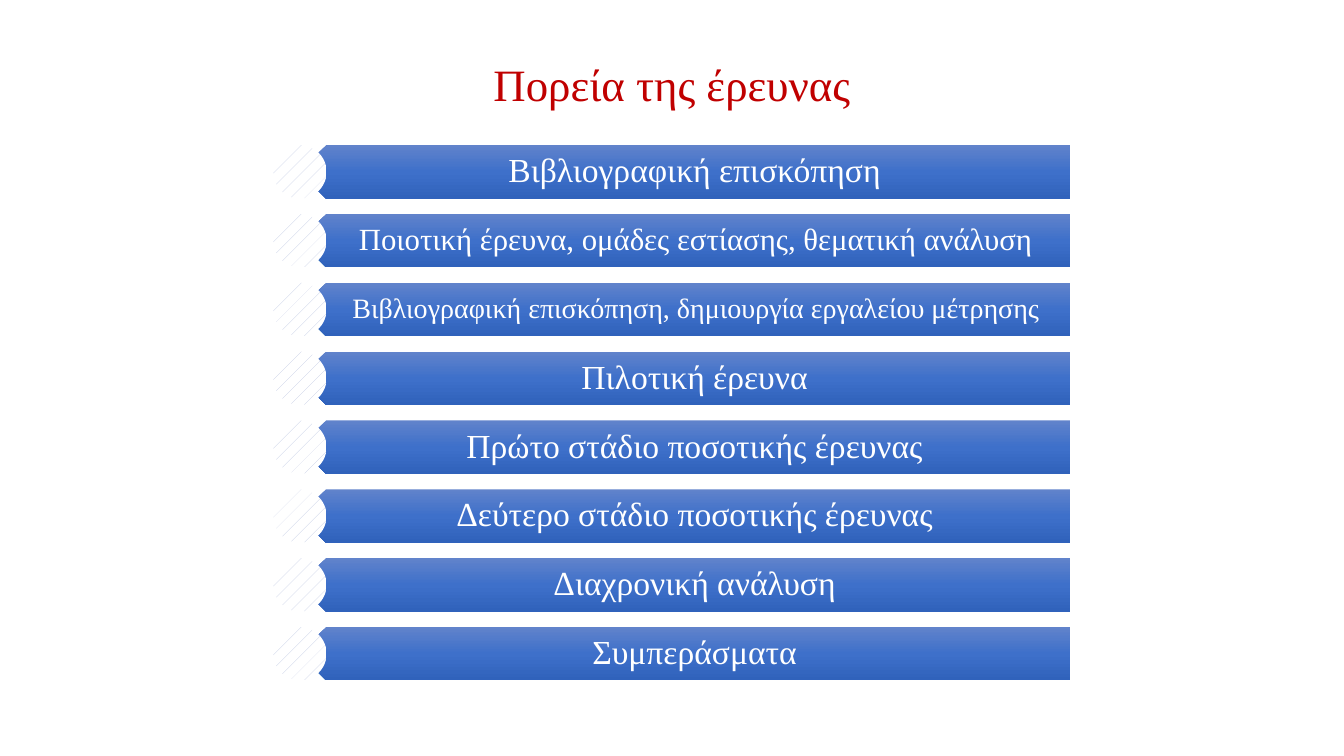
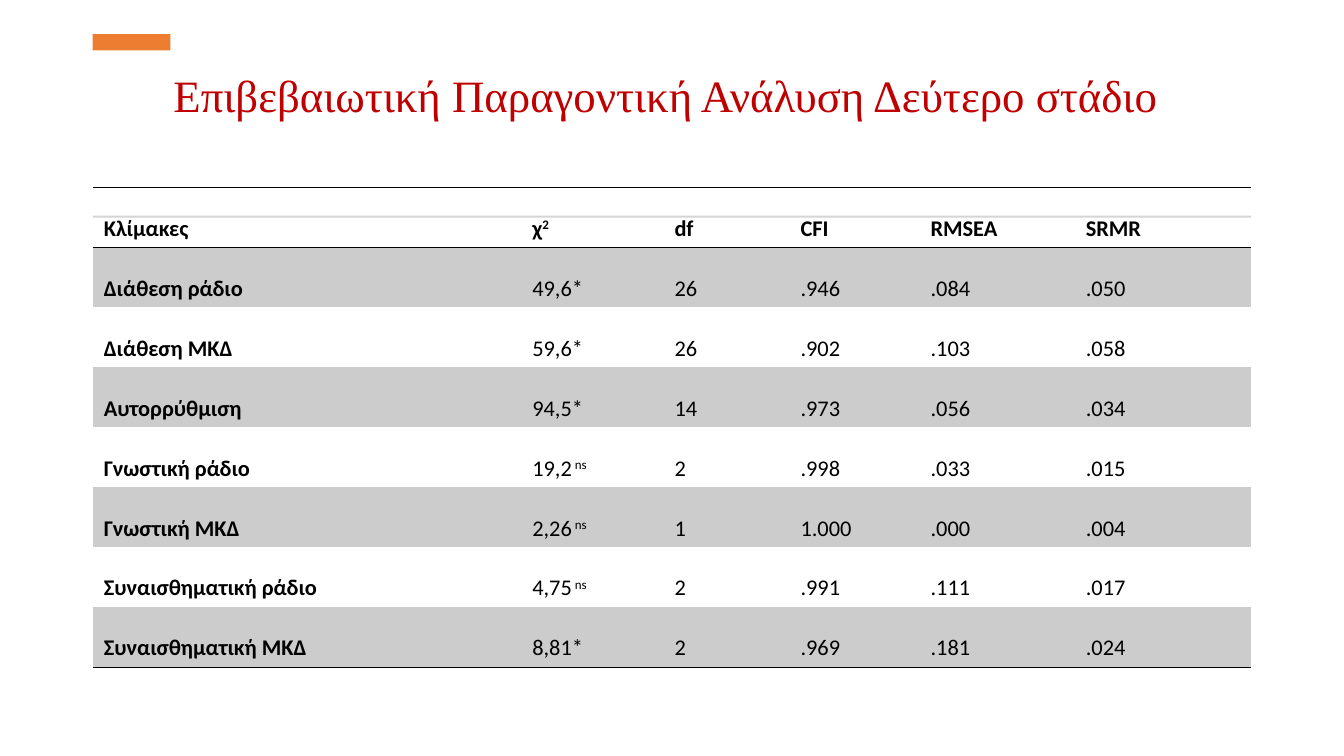
"""Build two slides: the steps of a study and a table of model fit."""
from pptx import Presentation
from pptx.dml.color import RGBColor
from pptx.enum.dml import MSO_PATTERN
from pptx.enum.shapes import MSO_SHAPE as SHAPE
from pptx.enum.text import MSO_ANCHOR as ANCHOR, PP_ALIGN as ALIGN
from pptx.oxml import parse_xml
from pptx.oxml.ns import nsdecls, qn
from pptx.util import Inches, Pt

RED, WHITE, BLACK = "C00000", "FFFFFF", "000000"
ORANGE, RULE_GREY, BAND_GREY = "ED7D31", "D5D5D5", "CCCCCC"
HATCH = "C1C9E4"
BAR_STOPS = [(0, "6183CB"), (50, "3E70CA"), (100, "3062BB")]
SERIF, SANS = "Times New Roman", "Calibri"
MARGIN, CONTENT_WIDTH = 0.92, 11.49


def add_text(page, text, place, size, color, anchor=ANCHOR.MIDDLE, sides=(0.1, 0.1)):
    box = page.shapes.add_textbox(*map(Inches, place))
    frame = box.text_frame
    frame.word_wrap = True
    frame.vertical_anchor = anchor
    frame.margin_left, frame.margin_right = map(Inches, sides)
    para = frame.paragraphs[0]
    para.text = text
    para.alignment = ALIGN.CENTER
    para.line_spacing = 0.9
    para.font.name, para.font.size = SERIF, Pt(size)
    para.font.color.rgb = RGBColor.from_string(color)


def add_plain(page, preset, place, color):
    shape = page.shapes.add_shape(preset, *map(Inches, place))
    shape.shadow.inherit = False
    shape.line.fill.background()
    shape.fill.solid()
    shape.fill.fore_color.rgb = RGBColor.from_string(color)
    return shape


deck = Presentation()
deck.slide_width, deck.slide_height = Inches(13.33), Inches(7.5)
blank = deck.slide_layouts[6]

page = deck.slides.add_slide(blank)
add_text(page, "Πορεία της έρευνας", (MARGIN, 0.4, CONTENT_WIDTH, 0.92), 32, RED)

steps = [
    ("Βιβλιογραφική επισκόπηση", 24),
    ("Ποιοτική έρευνα, ομάδες εστίασης, θεματική ανάλυση", 22),
    ("Βιβλιογραφική επισκόπηση, δημιουργία εργαλείου μέτρησης", 20),
    ("Πιλοτική έρευνα", 24),
    ("Πρώτο στάδιο ποσοτικής έρευνας", 24),
    ("Δεύτερο στάδιο ποσοτικής έρευνας", 24),
    ("Διαχρονική ανάλυση", 24),
    ("Συμπεράσματα", 24),
]
first_top, last_top, bar_height = 1.44, 6.22, 0.53
pitch = (last_top - first_top) / (len(steps) - 1)
stops = "".join(
    f'<a:gs pos="{share * 1000}"><a:srgbClr val="{color}"/></a:gs>' for share, color in BAR_STOPS
)
gradient = (
    f'<a:gradFill {nsdecls("a")} rotWithShape="1"><a:gsLst>{stops}</a:gsLst>'
    '<a:lin ang="5400000" scaled="0"/></a:gradFill>'
)

for row, (step, size) in enumerate(steps):
    top = first_top + row * pitch
    bar = add_plain(page, SHAPE.PENTAGON, (2.97, top, 7.65, bar_height), BAR_STOPS[1][1])
    properties = bar._element.spPr
    properties.find(qn("a:xfrm")).set("flipH", "1")
    properties.replace(properties.find(qn("a:solidFill")), parse_xml(gradient))
    add_text(page, step, (3.11, top, 7.52, bar_height), size, WHITE, sides=(0.23, size * 0.008))
    disc = add_plain(page, SHAPE.OVAL, (2.71, top, bar_height, bar_height), WHITE)
    disc.fill.patterned()
    disc.fill.pattern = MSO_PATTERN.PERCENT_5
    disc.fill.fore_color.rgb = RGBColor.from_string(HATCH)
    disc.fill.back_color.rgb = RGBColor.from_string(WHITE)

page = deck.slides.add_slide(blank)
add_text(page, "Επιβεβαιωτική Παραγοντική Ανάλυση Δεύτερο στάδιο",
         (MARGIN - 0.06, 0.54, CONTENT_WIDTH, 0.72), 32, RED, ANCHOR.BOTTOM)
add_plain(page, SHAPE.RECTANGLE, (MARGIN, 0.34, 0.77, 0.16), ORANGE)
add_plain(page, SHAPE.RECTANGLE, (MARGIN, 2.14, CONTENT_WIDTH, 0.02), RULE_GREY)

fit_rows = [
    ("Κλίμακες", "χ^2", "df", "CFI", "RMSEA", "SRMR"),
    ("Διάθεση ράδιο", "49,6*", "26", ".946", ".084", ".050"),
    ("Διάθεση ΜΚΔ", "59,6*", "26", ".902", ".103", ".058"),
    ("Αυτορρύθμιση", "94,5*", "14", ".973", ".056", ".034"),
    ("Γνωστική ράδιο", "19,2^ ns", "2", ".998", ".033", ".015"),
    ("Γνωστική ΜΚΔ", "2,26^ ns", "1", "1.000", ".000", ".004"),
    ("Συναισθηματική ράδιο", "4,75^ ns", "2", ".991", ".111", ".017"),
    ("Συναισθηματική ΜΚΔ", "8,81*", "2", ".969", ".181", ".024"),
]
column_widths = [4.25, 1.41, 1.25, 1.29, 1.54, 1.75]
last_row = len(fit_rows) - 1
row_borders = {0: ("lnT", "lnB"), last_row: ("lnB",)}
table = page.shapes.add_table(
    len(fit_rows), len(column_widths),
    *map(Inches, (MARGIN, 1.86, CONTENT_WIDTH, 4.76)),
).table
table.first_row = table.horz_banding = False
table._tbl.tblPr.find(qn("a:tableStyleId")).text = "{2D5ABB26-0587-4C30-8999-92F81FD0307C}"
for column, width in zip(table.columns, column_widths):
    column.width = Inches(width)

for row, values in enumerate(fit_rows):
    for col, value in enumerate(values):
        cell = table.cell(row, col)
        cell.margin_left = cell.margin_right = Inches(0.11)
        cell.margin_top = cell.margin_bottom = 0
        para = cell.text_frame.paragraphs[0]
        para.line_spacing = 2.0
        para.font.name, para.font.size = SANS, Pt(16)
        para.font.bold = row == 0 or col == 0
        para.font.color.rgb = RGBColor.from_string(BLACK)
        base, mark, raised = value.partition("^")
        para.add_run().text = base
        if mark:
            span = para.add_run()
            span.text = raised
            span.font._element.set("baseline", "30000")
        for side in row_borders.get(row, ()):
            cell._tc.get_or_add_tcPr().append(parse_xml(
                f'<a:{side} {nsdecls("a")} w="12700"><a:solidFill>'
                f'<a:srgbClr val="{BLACK}"/></a:solidFill></a:{side}>'
            ))
        if row % 2:
            cell.fill.solid()
            cell.fill.fore_color.rgb = RGBColor.from_string(BAND_GREY)
        else:
            cell.fill.background()

deck.save("out.pptx")
